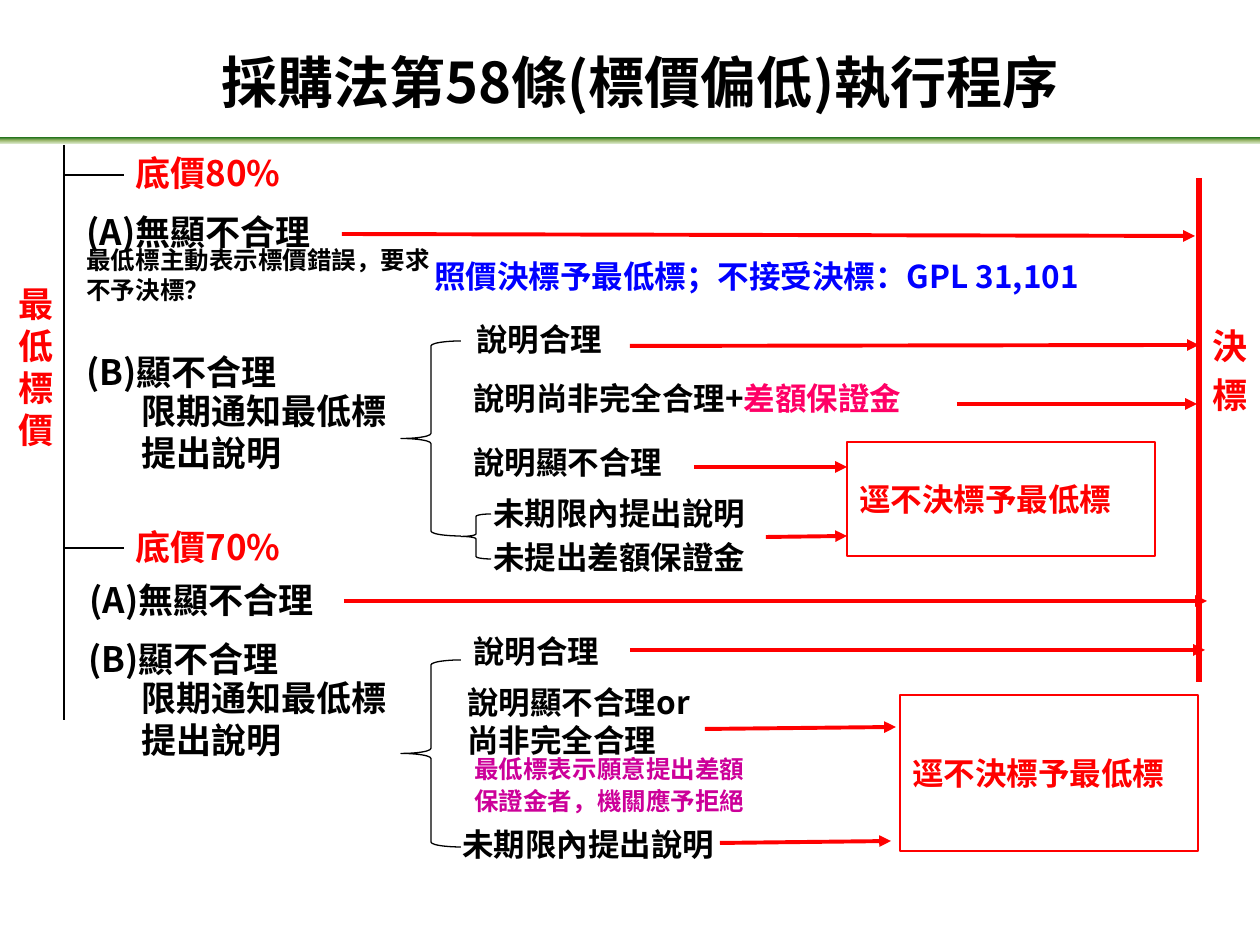
from copy import deepcopy

from lxml.etree import SubElement
from pptx import Presentation
from pptx.dml.color import RGBColor
from pptx.enum.shapes import MSO_CONNECTOR, MSO_SHAPE
from pptx.enum.text import MSO_ANCHOR, PP_ALIGN
from pptx.oxml.ns import qn
from pptx.util import Pt

PX = 914400 // 126
FONT = "Noto Sans CJK SC"
BLACK = RGBColor(0, 0, 0)
RED = RGBColor(255, 0, 0)
BLUE = RGBColor(0, 0, 255)
PINK = RGBColor(255, 0, 102)
PURPLE = RGBColor(204, 0, 153)
BAR_COLORS = [RGBColor(21, 107, 19), RGBColor(156, 184, 110), RGBColor(221, 235, 207)]

TITLE = "採購法第58條(標價偏低)執行程序"
REASONABLE = "(A)無顯不合理"
UNREASONABLE = "(B)顯不合理"
NOTICE = "限期通知最低標提出說明"
EXPLAINED = "說明合理"
LATE = "未期限內提出說明"
REJECTED = "逕不決標予最低標"

HEADINGS = [
    ((123, 145, 297, 54), ["底價80%"]),
    ((123, 519, 277, 54), ["底價70%"]),
    ((6, 276, 58, 180), ["最低標價"]),
]
CASES = [
    ((74, 204, 387, 54), [REASONABLE]),
    ((74, 344, 387, 54), [UNREASONABLE]),
    ((77, 572, 387, 54), [REASONABLE]),
    ((76, 631, 387, 54), [UNREASONABLE]),
    ((129, 383, 272, 97), [NOTICE]),
    ((129, 670, 272, 97), [NOTICE]),
]
OUTCOMES = [
    ((464, 314, 160, 50), [EXPLAINED]),
    ((461, 373, 515, 50), [[("說明尚非完全合理+", BLACK), ("差額保證金", PINK)]]),
    ((461, 437, 357, 50), ["說明顯不合理"]),
    ((481, 488, 357, 96), [LATE, "未提出差額保證金"]),
    ((461, 626, 160, 50), [EXPLAINED]),
    ((455, 677, 265, 88), ["說明顯不合理or尚非完全合理"]),
    ((450, 819, 357, 50), [LATE]),
]
REJECTIONS = [(847, 442, 308, 114), (900, 695, 298, 156)]
BRACES = [(401, 341, 60, 195), (461, 514, 30, 45), (401, 660, 60, 187)]
BRANCHES = [(64, 145, 64, 720), (64, 175, 124, 175), (64, 548, 124, 548)]
AWARD_LINE = (1199, 178, 1199, 682)
ARROWS = [
    (342, 234, 1195, 236), (630, 346, 1199, 345), (957, 404, 1197, 404),
    (694, 467, 847, 467), (766, 537, 847, 536), (344, 601, 1207, 601),
    (630, 650, 1205, 650), (705, 729, 896, 727), (720, 843, 891, 841),
]

deck = Presentation()
deck.slide_width, deck.slide_height = 1260 * PX, 945 * PX
slide = deck.slides.add_slide(deck.slide_layouts[6])


def emu(lengths):
    return [length * PX for length in lengths]


def write(frame, paragraphs, size=18, color=BLACK, gap=0, align=PP_ALIGN.LEFT,
          anchor=MSO_ANCHOR.TOP, wrap=True):
    frame.word_wrap = wrap
    frame.vertical_anchor = anchor
    for index, content in enumerate(paragraphs):
        paragraph = frame.paragraphs[0] if index == 0 else frame.add_paragraph()
        paragraph.alignment = align
        paragraph.line_spacing = Pt(size * 1.2)
        paragraph.space_before = Pt(gap if index else 0)
        for words, tint in [(content, color)] if isinstance(content, str) else content:
            run = paragraph.add_run()
            run.text = words
            run.font.name, run.font.size, run.font.bold = FONT, Pt(size), True
            run.font.color.rgb = tint
            SubElement(run.font._element, qn("a:ea"), typeface=FONT)


def add_text(place, paragraphs, **style):
    write(slide.shapes.add_textbox(*emu(place)).text_frame, paragraphs, **style)


def add_outline(preset, place, color):
    outline = slide.shapes.add_shape(preset, *emu(place))
    outline.shadow.inherit = False
    outline.fill.background()
    outline.line.color.rgb = color
    outline.line.width = Pt(0.75)
    return outline


def add_line(ends, color, width, arrow=False):
    line = slide.shapes.add_connector(MSO_CONNECTOR.STRAIGHT, *emu(ends))
    line.line.color.rgb = color
    line.line.width = Pt(width)
    if arrow:
        SubElement(line.line._get_or_add_ln(), qn("a:tailEnd"), type="triangle")
    SubElement(line._element.spPr, qn("a:effectLst"))


title_bar = add_outline(MSO_SHAPE.RECTANGLE, (0, 137, 1260, 7), BLACK)
title_bar.line.fill.background()
title_bar.fill.gradient()
title_bar.fill.gradient_angle = 270
stop_list = title_bar._element.spPr.find(".//" + qn("a:gsLst"))
stop_list.insert(1, deepcopy(stop_list[0]))
for index, stop in enumerate(title_bar.fill.gradient_stops):
    stop.position = index / 2
    stop.color.rgb = BAR_COLORS[index]

for branch in BRANCHES:
    add_line(branch, BLACK, 0.75)
for brace in BRACES:
    add_outline(MSO_SHAPE.LEFT_BRACE, brace, BLACK)
add_line(AWARD_LINE, RED, 3)
for arrow in ARROWS:
    add_line(arrow, RED, 2.25, arrow=True)

for place in REJECTIONS:
    write(add_outline(MSO_SHAPE.RECTANGLE, place, RED).text_frame, [REJECTED],
          color=RED, anchor=MSO_ANCHOR.MIDDLE, wrap=False)
for place, words in HEADINGS:
    add_text(place, words, size=20, color=RED)
for place, words in CASES:
    add_text(place, words, size=20)
for place, words in OUTCOMES:
    add_text(place, words, gap=3.6)
add_text((74, 239, 387, 75), ["最低標主動表示標價錯誤，要求不予決標？"], size=14)
add_text((422, 251, 725, 50), ["照價決標予最低標；不接受決標：GPL 31,101"], color=BLUE)
add_text((462, 748, 314, 76), ["最低標表示願意提出差額", "保證金者，機關應予拒絕"],
         size=14, color=PURPLE, gap=1.4)
add_text((1200, 318, 60, 105), ["決", "標"], size=20, color=RED, gap=4, wrap=False)
add_text((64, 42, 1152, 78), [TITLE], size=32, align=PP_ALIGN.CENTER,
         anchor=MSO_ANCHOR.MIDDLE)

deck.save("out.pptx")
